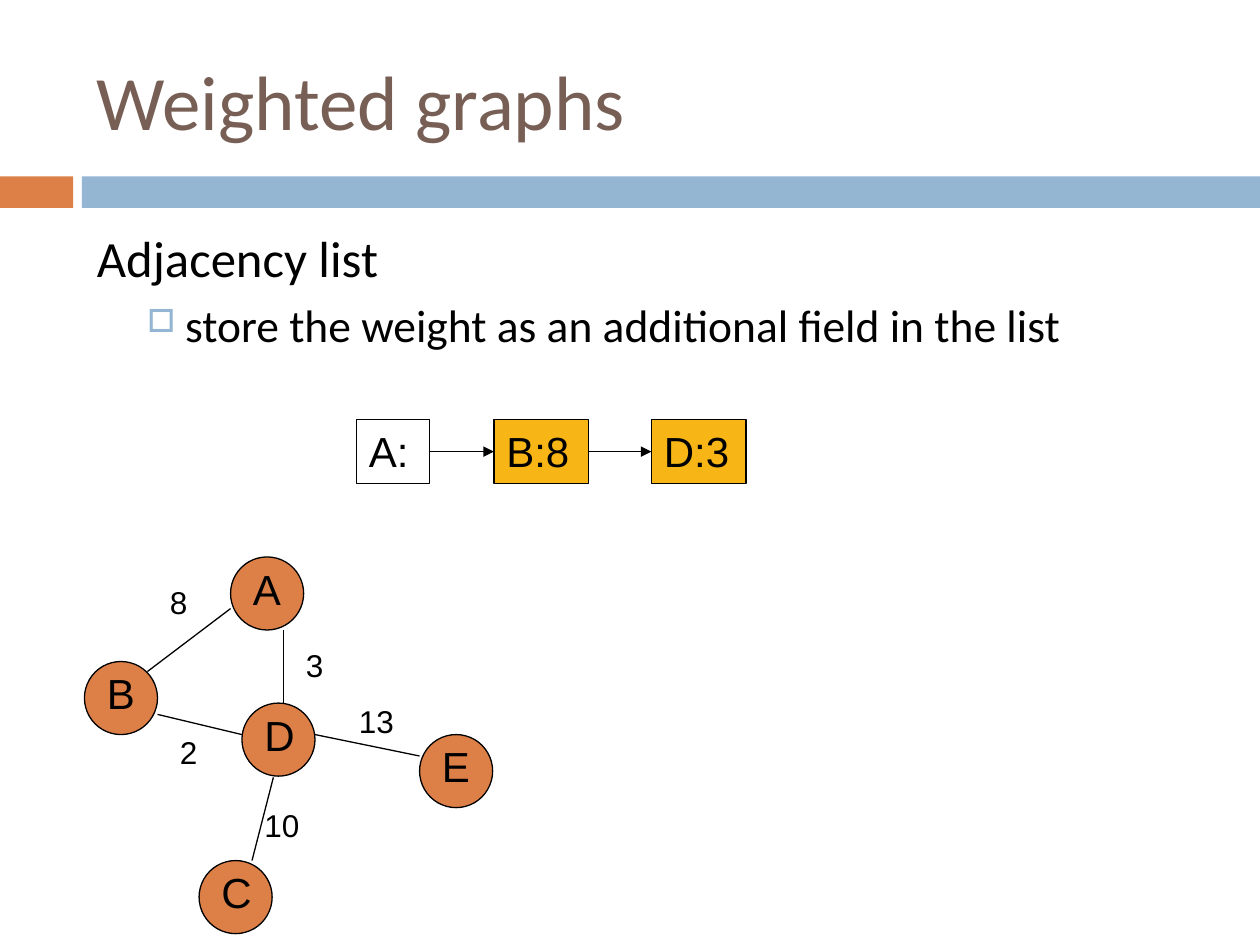
from lxml import etree
from pptx import Presentation
from pptx.dml.color import RGBColor
from pptx.enum.shapes import MSO_CONNECTOR as CONNECTOR, MSO_SHAPE as SHAPE
from pptx.enum.text import MSO_ANCHOR as ANCHOR, PP_ALIGN as ALIGN
from pptx.oxml.ns import qn
from pptx.util import Inches, Pt

BLACK, ORANGE, BLUE = "000000", "DD8047", "94B6D2"
BROWN, YELLOW = "775F55", "F7B615"
NODE_SIZE = 0.58


def color(hex_string):
    return RGBColor.from_string(hex_string)


class SlideBuilder:
    heading_font = "Calibri"
    diagram_font = "Arial"
    line_width = Pt(0.75)

    def __init__(self, slide):
        self.slide = slide

    def style(self, paragraph, font, size, hex_string=BLACK):
        paragraph.alignment = ALIGN.LEFT
        paragraph.font.name = font
        paragraph.font.size = Pt(size)
        paragraph.font.color.rgb = color(hex_string)

    def fill_text(self, shape, text, font, size, hex_string=BLACK, anchor=ANCHOR.TOP):
        frame = shape.text_frame
        frame.word_wrap = True
        frame.vertical_anchor = anchor
        frame.text = text
        self.style(frame.paragraphs[0], font, size, hex_string)
        return frame

    def shape(self, kind, left, top, width, height, fill=None, outlined=True, parent=None):
        shape = (parent or self.slide).shapes.add_shape(
            kind, Inches(left), Inches(top), Inches(width), Inches(height))
        shape.shadow.inherit = False
        if fill:
            shape.fill.solid()
            shape.fill.fore_color.rgb = color(fill)
        else:
            shape.fill.background()
        if outlined:
            shape.line.color.rgb = color(BLACK)
            shape.line.width = self.line_width
        else:
            shape.line.fill.background()
        return shape

    def text(self, text, left, top, width, height, font, size, parent=None, **options):
        box = (parent or self.slide).shapes.add_textbox(
            Inches(left), Inches(top), Inches(width), Inches(height))
        return self.fill_text(box, text, font, size, **options)

    def bullet(self, frame, text, size):
        paragraph = frame.add_paragraph()
        paragraph.text = text
        paragraph.level = 1
        paragraph.space_before = Pt(5.5)
        self.style(paragraph, self.heading_font, size)
        properties = paragraph._p.get_or_add_pPr()
        properties.set("marL", str(Inches(0.7)))
        properties.set("indent", str(Inches(-0.3)))
        marks = [
            etree.Element(qn("a:buClr")),
            etree.Element(qn("a:buSzPct"), val="70000"),
            etree.Element(qn("a:buChar"), char="□"),
        ]
        etree.SubElement(marks[0], qn("a:srgbClr"), val=BLUE)
        for position, mark in enumerate(marks):
            properties.insert(position + 1, mark)  # after spcBef, before defRPr

    def line(self, start=(0, 0), end=(0, 0)):
        connector = self.slide.shapes.add_connector(
            CONNECTOR.STRAIGHT, *(Inches(value) for value in (*start, *end)))
        connector.line.color.rgb = color(BLACK)
        connector.line.width = self.line_width
        etree.SubElement(connector._element.spPr, qn("a:effectLst"))
        return connector

    def arrow(self, source, target):
        connector = self.line()
        connector.begin_connect(source, 3)
        connector.end_connect(target, 1)
        outline = connector._element.spPr.find(qn("a:ln"))
        etree.SubElement(outline, qn("a:tailEnd"), type="triangle")

    def node(self, letter, left, top):
        group = self.slide.shapes.add_group_shape()
        self.shape(SHAPE.OVAL, left, top, NODE_SIZE, NODE_SIZE, ORANGE, parent=group)
        self.text(letter, left + 0.08, top, 0.5, 0.5, self.diagram_font, 24, parent=group)

    def list_cell(self, text, left, width, fill=None):
        cell = self.shape(SHAPE.RECTANGLE, left, 3.33, width, 0.51, fill)
        self.fill_text(cell, text, self.diagram_font, 24)
        return cell


def main():
    presentation = Presentation()
    presentation.slide_width, presentation.slide_height = Inches(10), Inches(7.5)
    builder = SlideBuilder(presentation.slides.add_slide(presentation.slide_layouts[6]))

    # Band, title and body
    builder.shape(SHAPE.RECTANGLE, 0, 1.4, 0.58, 0.25, ORANGE, outlined=False)
    builder.shape(SHAPE.RECTANGLE, 0.65, 1.4, 9.35, 0.25, BLUE, outlined=False)
    builder.text("Weighted graphs", 0.67, 0.25, 8.92, 1.08, builder.heading_font, 44,
                 hex_string=BROWN, anchor=ANCHOR.MIDDLE)
    body = builder.text("Adjacency list", 0.67, 1.75, 8.92, 4.92, builder.heading_font, 29)
    body.paragraphs[0].space_before = Pt(7)
    builder.bullet(body, "store the weight as an additional field in the list", 26)

    # Graph nodes
    nodes = {"A": (1.83, 4.42), "B": (0.67, 5.25), "C": (1.58, 6.83),
             "E": (3.33, 5.83), "D": (1.92, 5.58)}
    for letter, (left, top) in nodes.items():
        builder.node(letter, left, top)

    # Edges: start, end, weight, corner of the weight label
    edges = [
        ((1.17, 5.33), (1.83, 4.83), "8", (1.25, 4.58)),
        ((1.25, 5.67), (1.92, 5.83), "2", (1.33, 5.77)),
        ((2.25, 5.58), (2.25, 5), "3", (2.33, 5.08)),
        ((2.5, 5.83), (3.33, 6), "13", (2.75, 5.52)),
        ((2.17, 6.17), (2, 6.83), "10", (2, 6.35)),
    ]
    for start, end, weight, corner in edges:
        builder.line(start, end)
        builder.text(weight, *corner, 0.58, 0.4, builder.diagram_font, 18)

    # Adjacency list of A
    cells = [
        builder.list_cell("A:", 2.83, 0.58),
        builder.list_cell("B:8", 3.92, 0.75, YELLOW),
        builder.list_cell("D:3", 5.17, 0.75, YELLOW),
    ]
    for source, target in zip(cells, cells[1:]):
        builder.arrow(source, target)

    presentation.save("out.pptx")


if __name__ == "__main__":
    main()
